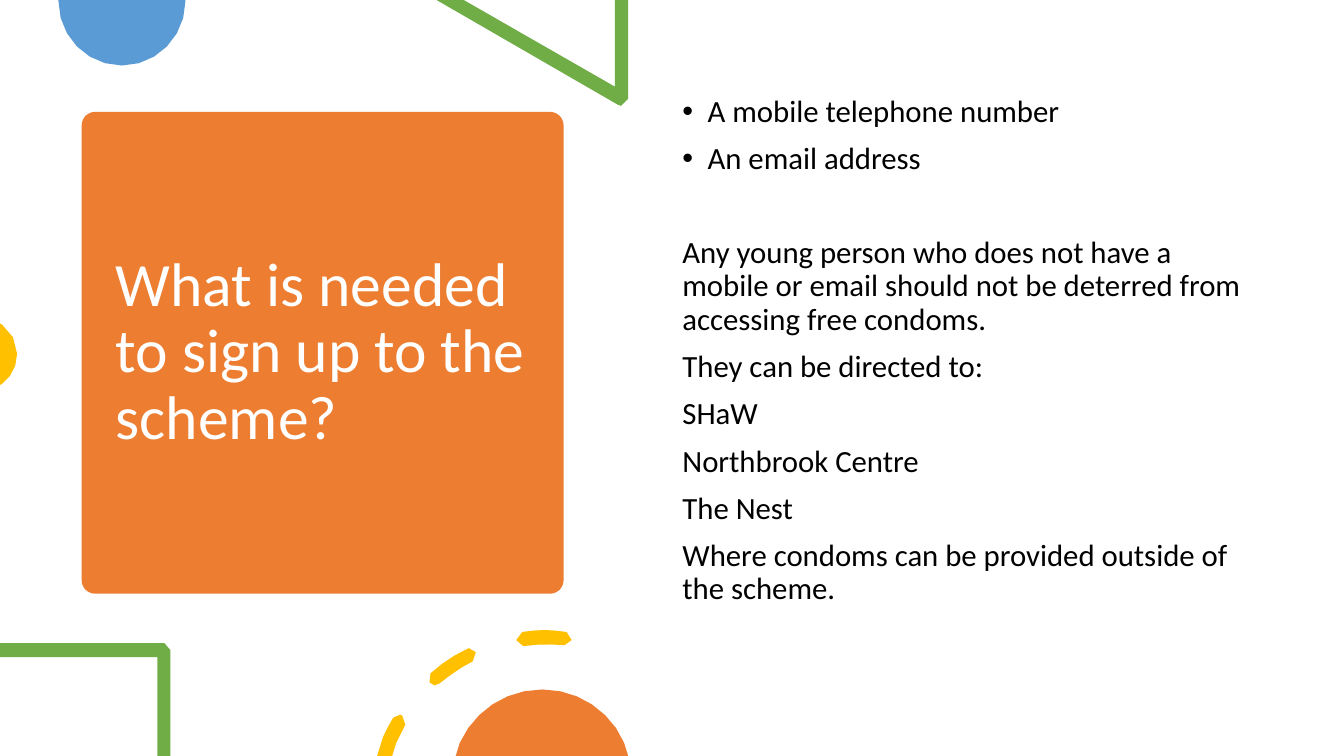
from math import ceil, dist

from lxml.etree import SubElement as Sub
from pptx import Presentation
from pptx.dml.color import RGBColor as Rgb
from pptx.enum.shapes import MSO_SHAPE as Kind
from pptx.enum.text import MSO_ANCHOR as Anchor
from pptx.oxml.ns import qn
from pptx.util import Inches, Pt

HUES = {
    "orange": "ED7D31", "blue": "5B9BD5", "green": "70AD47",
    "gold": "FFC000", "white": "FFFFFF", "black": "000000",
}
FONT = "Calibri"
RATE = 6  # straight pieces per inch of curve

# Outlines in inches from the corner of their box:
# a pair is a straight step, six numbers are a Bezier step
DISC = [(1.26, 0), (0, 0), (0, 0.01), (0, 0.36, 0.28, 0.65, 0.63, 0.65),
        (0.98, 0.65, 1.26, 0.36, 1.26, 0.01)]
WEDGE = [(1.9, 0), (1.77, 0), (1.77, 0.86), (0.27, 0), (0, 0), (1.8, 1.04),
         (1.81, 1.05, 1.82, 1.05, 1.83, 1.05),
         (1.87, 1.05, 1.9, 1.02, 1.9, 0.98)]
DOT = [(0, 0), (0, 0.61), (0.02, 0.6), (0.11, 0.53, 0.17, 0.43, 0.17, 0.3),
       (0.17, 0.18, 0.11, 0.08, 0.02, 0.01)]
FRAME = [(1.63, 0), (0, 0), (0, 0.14), (1.56, 0.14), (1.56, 1.12),
         (1.69, 1.12), (1.69, 0.07), (1.69, 0.03, 1.66, 0, 1.63, 0)]
DASHES = [
    [(0.23, 0.84), (0.2, 0.83, 0.18, 0.85, 0.16, 0.87),
     (0.12, 0.93, 0.09, 1, 0.06, 1.06), (0, 1.25), (0.15, 1.25), (0.19, 1.12),
     (0.22, 1.06, 0.25, 1, 0.28, 0.94), (0.3, 0.91, 0.29, 0.86, 0.25, 0.85)],
    [(0.91, 0.18), (0.89, 0.19), (0.76, 0.25, 0.64, 0.33, 0.53, 0.43),
     (0.5, 0.45, 0.5, 0.5, 0.52, 0.52), (0.53, 0.54, 0.55, 0.55, 0.57, 0.55),
     (0.59, 0.55, 0.61, 0.54, 0.62, 0.53), (0.72, 0.45, 0.83, 0.37, 0.95, 0.31),
     (0.99, 0.29, 1, 0.25, 0.98, 0.22), (0.97, 0.19, 0.94, 0.18, 0.91, 0.18)],
    [(1.66, 0), (1.58, 0, 1.51, 0.01, 1.44, 0.02),
     (1.4, 0.02, 1.37, 0.06, 1.38, 0.1), (1.38, 0.13, 1.41, 0.16, 1.45, 0.16),
     (1.59, 0.14, 1.72, 0.14, 1.86, 0.15), (1.89, 0.16, 1.93, 0.13, 1.93, 0.1),
     (1.94, 0.06, 1.91, 0.02, 1.88, 0.02), (1.8, 0.01, 1.73, 0, 1.66, 0)],
]
MOUND = [(0.86, 0), (0.49, 0, 0.18, 0.22, 0.04, 0.53), (0, 0.66),
         (1.71, 0.66), (1.67, 0.53), (1.54, 0.22, 1.22, 0, 0.86, 0)]

NEEDS = ["A mobile telephone number", "An email address"]
ADVICE = [
    "Any young person who does not have a mobile or email should not be "
    "deterred from accessing free condoms.",
    "They can be directed to:",
    "SHaW",
    "Northbrook Centre",
    "The Nest",
    "Where condoms can be provided outside of the scheme.",
]


def hue(name):
    return Rgb.from_string(HUES[name])


def paint(shape, color):
    shape.shadow.inherit = False
    shape.fill.solid()
    shape.fill.fore_color.rgb = hue(color)
    shape.line.fill.background()


def trace(steps):
    """Turn line and Bezier steps into points, few on short curves."""
    dots = [steps[0]]
    for step in steps[1:]:
        if len(step) == 2:
            dots.append(step)
            continue
        knots = [dots[-1], step[:2], step[2:4], step[4:]]
        count = ceil(RATE * dist(knots[0], knots[3]))
        for i in range(1, count + 1):
            t = i / count
            mix = ((1 - t) ** 3, 3 * t * (1 - t) ** 2, 3 * t * t * (1 - t), t ** 3)
            dots.append(tuple(sum(m * k[axis] for m, k in zip(mix, knots))
                              for axis in (0, 1)))
    if dots[-1] == dots[0]:
        dots.pop()
    return [(Inches(x), Inches(y)) for x, y in dots]


def add_art(slide, left, top, loops, color):
    first, *rest = [trace(loop) for loop in loops]
    pen = slide.shapes.build_freeform(*first[0], scale=1.0)
    pen.add_line_segments(first[1:], close=True)
    for dots in rest:
        pen.move_to(*dots[0])
        pen.add_line_segments(dots[1:], close=True)
    paint(pen.convert_to_shape(Inches(left), Inches(top)), color)


def add_frame(slide, left, top, width, height):
    box = slide.shapes.add_textbox(*map(Inches, (left, top, width, height)))
    box.text_frame.word_wrap = True
    return box.text_frame


def add_run(para, text, size, color):
    para.line_spacing = 0.9
    run = para.add_run()
    run.text = text
    run.font.size = Pt(size)
    run.font.name = FONT
    run.font.color.rgb = hue(color)


def add_bullet(para):
    props = para._p.get_or_add_pPr()
    props.set("marL", str(Inches(0.25)))
    props.set("indent", str(Inches(-0.25)))
    Sub(props, qn("a:buFont"), typeface="Arial")
    Sub(props, qn("a:buChar"), char="•")


def add_title(slide, left, top, side):
    card = slide.shapes.add_shape(
        Kind.ROUNDED_RECTANGLE, *map(Inches, (left, top, side, side)))
    card.adjustments[0] = 0.028
    paint(card, "orange")
    frame = add_frame(slide, left + 0.24, top + 0.11, side - 0.47, side - 0.22)
    frame.vertical_anchor = Anchor.MIDDLE
    add_run(frame.paragraphs[0], "What is needed to sign up to the scheme?",
            44, "white")


def add_body(slide, left, top, width, height):
    frame = add_frame(slide, left, top, width, height)
    for i, text in enumerate(NEEDS + ADVICE):
        para = frame.add_paragraph() if i else frame.paragraphs[0]
        # A wider gap sets the advice apart from the list
        para.space_before = Pt(43.5 if i == len(NEEDS) else 10)
        add_run(para, text, 22, "black")
        if i < len(NEEDS):
            add_bullet(para)


def main():
    deck = Presentation()
    deck.slide_width, deck.slide_height = Inches(13.33), Inches(7.5)
    slide = deck.slides.add_slide(deck.slide_layouts[6])

    # Title card
    add_title(slide, 0.81, 1.11, 4.78)

    # Art along the top and left edges
    add_art(slide, 0.58, 0, [DISC], "blue")
    add_art(slide, 4.33, 0, [WEDGE], "green")
    add_art(slide, 0, 3.21, [DOT], "gold")

    # Body text
    add_body(slide, 6.67, 0.9, 5.75, 5.35)

    # Art along the bottom edge
    add_art(slide, 0, 6.38, [FRAME], "green")
    add_art(slide, 3.74, 6.25, DASHES, "gold")
    add_art(slide, 4.52, 6.84, [MOUND], "orange")

    deck.save("out.pptx")


if __name__ == "__main__":
    main()
